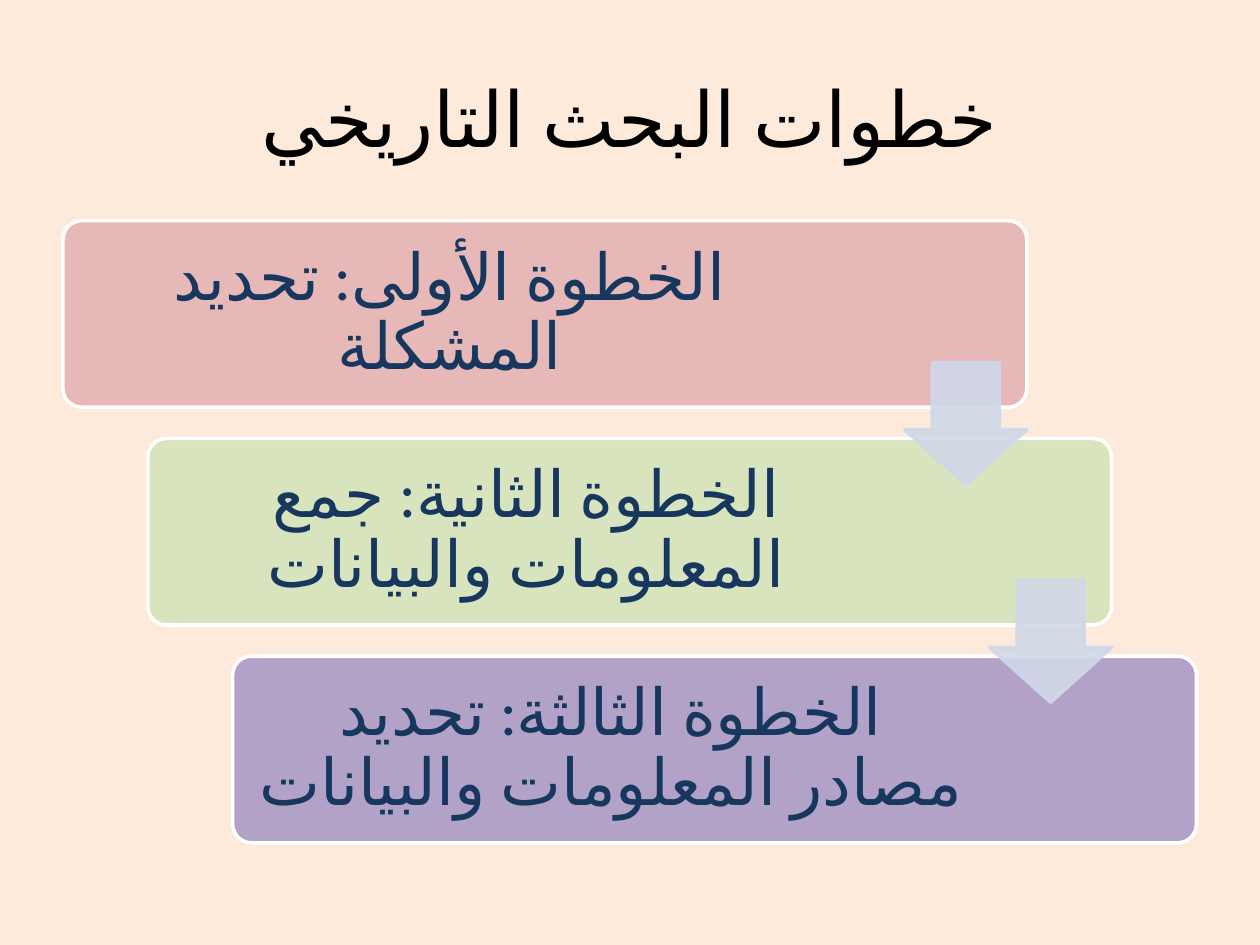
from lxml.etree import SubElement
from pptx import Presentation
from pptx.dml.color import RGBColor
from pptx.enum.shapes import MSO_SHAPE
from pptx.enum.text import MSO_ANCHOR, PP_ALIGN
from pptx.oxml.ns import qn
from pptx.util import Cm, Pt


def rgb(value):
    return RGBColor.from_string(value)


def write(tf, text, size=37, color="17375E", font="Calibri", spacing=None, inset=None):
    """Write one centred right-to-left paragraph."""
    tf.word_wrap = True
    tf.vertical_anchor = MSO_ANCHOR.MIDDLE
    if inset is not None:
        tf.margin_left = tf.margin_right = tf.margin_top = tf.margin_bottom = inset
    p = tf.paragraphs[0]
    p.alignment = PP_ALIGN.CENTER
    p.line_spacing = spacing
    p._p.get_or_add_pPr().set("rtl", "1")
    r = p.add_run()
    r.text = text
    r.font.size = Pt(size)
    r.font.name = font
    r.font.color.rgb = rgb(color)
    rPr = r._r.get_or_add_rPr()
    rPr.set("lang", "ar-SA")
    SubElement(rPr, qn("a:cs"), typeface=font)


prs = Presentation()
prs.slide_width, prs.slide_height = Cm(25.4), Cm(19.05)
s = prs.slides.add_slide(prs.slide_layouts[5])
s.background.fill.solid()
s.background.fill.fore_color.rgb = rgb("FDEADA")

# Title
title = s.shapes.title
title.left, title.top, title.width, title.height = Cm(1.27), Cm(0.76), Cm(22.86), Cm(3.18)
write(title.text_frame, "خطوات البحث التاريخي", size=44, color="000000")

# Staircase of steps: fill, text width in cm, wording
steps = [
    ("E6B9B8", 15.37, "الخطوة الأولى: تحديد المشكلة"),
    ("D7E4BD", 15.04, "الخطوة الثانية: جمع المعلومات والبيانات"),
    ("B3A2C7", 15.04, "الخطوة الثالثة: تحديد مصادر المعلومات والبيانات"),
]
left, top, step_x, step_y = 1.27, 4.45, 1.71, 4.39
card_w, card_h, pad = 19.43, 3.76, 0.11

for i, (fill, text_w, text) in enumerate(steps):
    x, y = left + i * step_x, top + i * step_y
    card = s.shapes.add_shape(MSO_SHAPE.ROUNDED_RECTANGLE, Cm(x), Cm(y), Cm(card_w), Cm(card_h))
    card.adjustments[0] = 0.1
    card.shadow.inherit = False
    card.fill.solid()
    card.fill.fore_color.rgb = rgb(fill)
    card.line.color.rgb = rgb("FFFFFF")
    card.line.width = Pt(2)
    box = s.shapes.add_textbox(Cm(x + pad), Cm(y + pad), Cm(text_w), Cm(card_h - 2 * pad))
    write(box.text_frame, text, spacing=0.9, inset=Cm(0.38))

# Arrows from each step to the next, flush with the card's right edge
arrow = 2.46
for i in range(len(steps) - 1):
    x = left + i * step_x + card_w - arrow
    y = top + i * step_y + 2.86
    arr = s.shapes.add_shape(MSO_SHAPE.DOWN_ARROW, Cm(x), Cm(y), Cm(arrow), Cm(arrow))
    # The arrow's adjustments are head length, then shaft width
    for gd_name, value in (("adj1", 0.55), ("adj2", 0.45)):
        arr.adjustments[0 if gd_name == "adj1" else 1] = value
    arr.shadow.inherit = False
    arr.fill.solid()
    arr.fill.fore_color.rgb = rgb("D0D8E8")
    arr.line.color.rgb = rgb("D0D8E8")
    arr.line.width = Pt(2)
    for clr in arr._element.spPr.iter(qn("a:srgbClr")):
        SubElement(clr, qn("a:alpha"), val="90000")

prs.save("out.pptx")
